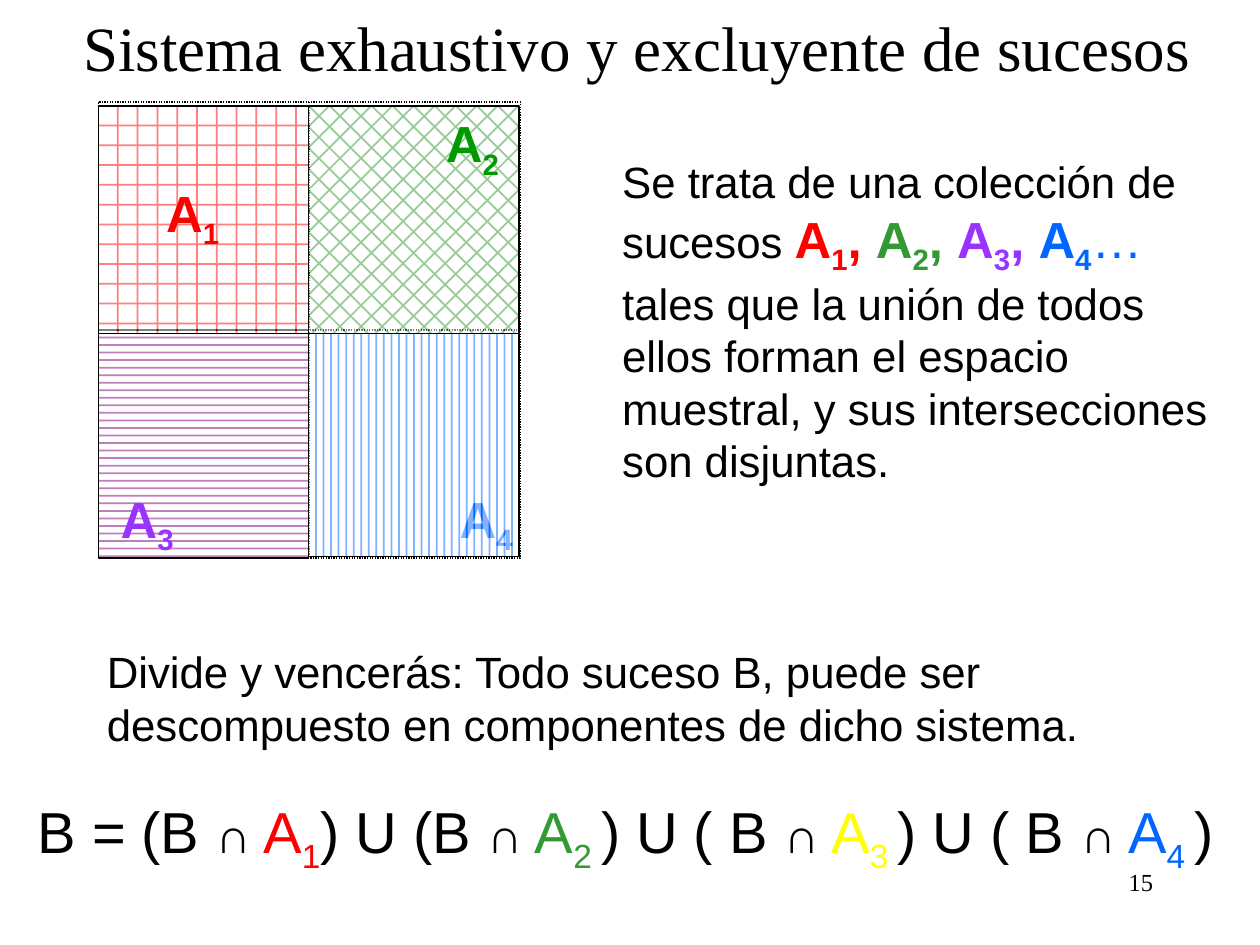
from lxml.etree import SubElement
from pptx import Presentation
from pptx.dml.color import RGBColor
from pptx.enum.dml import MSO_LINE, MSO_PATTERN
from pptx.enum.shapes import MSO_CONNECTOR, MSO_SHAPE
from pptx.enum.text import MSO_ANCHOR, MSO_AUTO_SIZE, PP_ALIGN
from pptx.oxml.ns import qn
from pptx.util import Inches, Pt

SANS, SERIF = "Arial", "Times New Roman"
BLACK, RED, GREEN, PURPLE, BLUE = "000000", "FF0000", "339933", "9933FF", "0066FF"


def color(value):
    return RGBColor.from_string(value)


def run(text, size=25, ink=BLACK, font=SANS, bold=False, sub=False):
    return text, size, ink, font, bold, sub


def event(number, ink, size=29, bold=True):
    """Runs for the letter A with its subscript."""
    return [run("A", size, ink, bold=bold), run(number, size, ink, bold=bold, sub=True)]


class Board:
    def __init__(self, slide):
        self.s = slide

    def outline(self, sp, dash=None):
        sp.line.color.rgb = color(BLACK)
        sp.line.width = Pt(0.75)
        if dash:
            sp.line.dash_style = dash

    def box(self, x, y, w, h, dash=None):
        sp = self.s.shapes.add_shape(MSO_SHAPE.RECTANGLE, Inches(x), Inches(y),
                                     Inches(w), Inches(h))
        sp.shadow.inherit = False
        sp.fill.background()
        self.outline(sp, dash)
        return sp

    def cell(self, x, y, w, h, pattern, ink):
        """Rectangle with a half-transparent pattern."""
        sp = self.box(x, y, w, h)
        sp.fill.patterned()
        sp.fill.pattern = pattern
        sp.fill.fore_color.rgb = color(ink)
        sp.fill.back_color.rgb = color("FFFFFF")
        for clr in sp.fill._xPr.find(qn("a:pattFill")).iter(qn("a:srgbClr")):
            SubElement(clr, qn("a:alpha"), val="50000")

    def divider(self, frame, start, end):
        """Dotted line between two side middles of the frame."""
        line = self.s.shapes.add_connector(MSO_CONNECTOR.STRAIGHT, 0, 0, 0, 0)
        line.begin_connect(frame, start)
        line.end_connect(frame, end)
        self.outline(line, MSO_LINE.ROUND_DOT)
        SubElement(line._element.spPr, qn("a:effectLst"))

    def text(self, x, y, w, h, *paragraphs, wrap=True, align=PP_ALIGN.LEFT,
             anchor=MSO_ANCHOR.TOP):
        tf = self.s.shapes.add_textbox(Inches(x), Inches(y), Inches(w), Inches(h)).text_frame
        tf.word_wrap = wrap
        tf.auto_size = MSO_AUTO_SIZE.NONE
        tf.vertical_anchor = anchor
        for i, runs in enumerate(paragraphs):
            p = tf.add_paragraph() if i else tf.paragraphs[0]
            p.alignment = align
            for text, size, ink, font, bold, sub in runs:
                r = p.add_run()
                r.text = text
                r.font.size = Pt(size)
                r.font.name = font
                r.font.bold = bold
                r.font.color.rgb = color(ink)
                if sub:
                    r.font._element.set("baseline", "-25000")

    def label(self, x, y, number, ink):
        self.text(x, y, 0.64, 0.58, event(number, ink), wrap=False)


def main():
    prs = Presentation()
    prs.slide_width, prs.slide_height = Inches(10), Inches(7.5)
    board = Board(prs.slides.add_slide(prs.slide_layouts[6]))

    board.text(7.17, 6.83, 2.08, 0.5, [run("15", 14, font=SERIF)], align=PP_ALIGN.RIGHT)
    board.text(0.43, -0.08, 9.25, 0.89,
               [run("Sistema exhaustivo y excluyente de sucesos", 36, font=SERIF)],
               align=PP_ALIGN.CENTER, anchor=MSO_ANCHOR.MIDDLE)

    # Sample space split into four events; A4's label lies under its cell
    left, top, side, height = 0.78, 0.81, 1.67, 1.81
    middle = left + side
    board.cell(left, top + height, side, height, MSO_PATTERN.DASHED_HORIZONTAL, "800080")
    frame = board.box(left, top, 3.35, 2 * height, MSO_LINE.ROUND_DOT)
    board.divider(frame, 0, 2)
    board.divider(frame, 1, 3)
    board.label(0.86, 3.82, "3", PURPLE)
    board.label(3.55, 3.82, "4", BLUE)
    board.cell(left, 0.84, side, height, MSO_PATTERN.DOTTED_GRID, RED)
    board.cell(middle, 0.84, side, height, MSO_PATTERN.DIAGONAL_BRICK, GREEN)
    board.cell(middle, 2.65, side, 1.77, MSO_PATTERN.DASHED_VERTICAL, BLUE)
    board.label(1.22, 1.39, "1", RED)
    board.label(3.44, 0.84, "2", "009900")

    definition = [run("Se trata de una colección de sucesos ")]
    for number, ink in (("1", RED), ("2", GREEN), ("3", PURPLE)):
        definition += event(number, ink) + [run(", ", 29, ink, bold=True)]
    definition += event("4", BLUE) + [run("…", 29, BLUE)]
    board.text(4.84, 1.18, 5.16, 2.67, definition,
               [run("tales que la unión de todos")],
               [run("ellos forman el espacio muestral, y sus intersecciones son disjuntas.")])

    board.text(0.75, 5.07, 8.83, 0.93,
               [run("Divide y vencerás: Todo suceso B, puede ser descompuesto en "
                    "componentes de dicho sistema.")])

    formula = []
    for lead, number, ink in (("B = (B ", "1", RED), (") U (B ", "2 ", GREEN),
                              (") U ( B ", "3 ", "FFFF00"), (") U ( B ", "4 ", BLUE)):
        formula += [run(lead, 33), run("∩ ", 28, font=SERIF)]
        formula += event(number, ink, 33, bold=False)
    formula.append(run(")", 33))
    board.text(0.2, 6.27, 9.85, 0.65, formula, wrap=False)

    prs.save("out.pptx")


if __name__ == "__main__":
    main()
